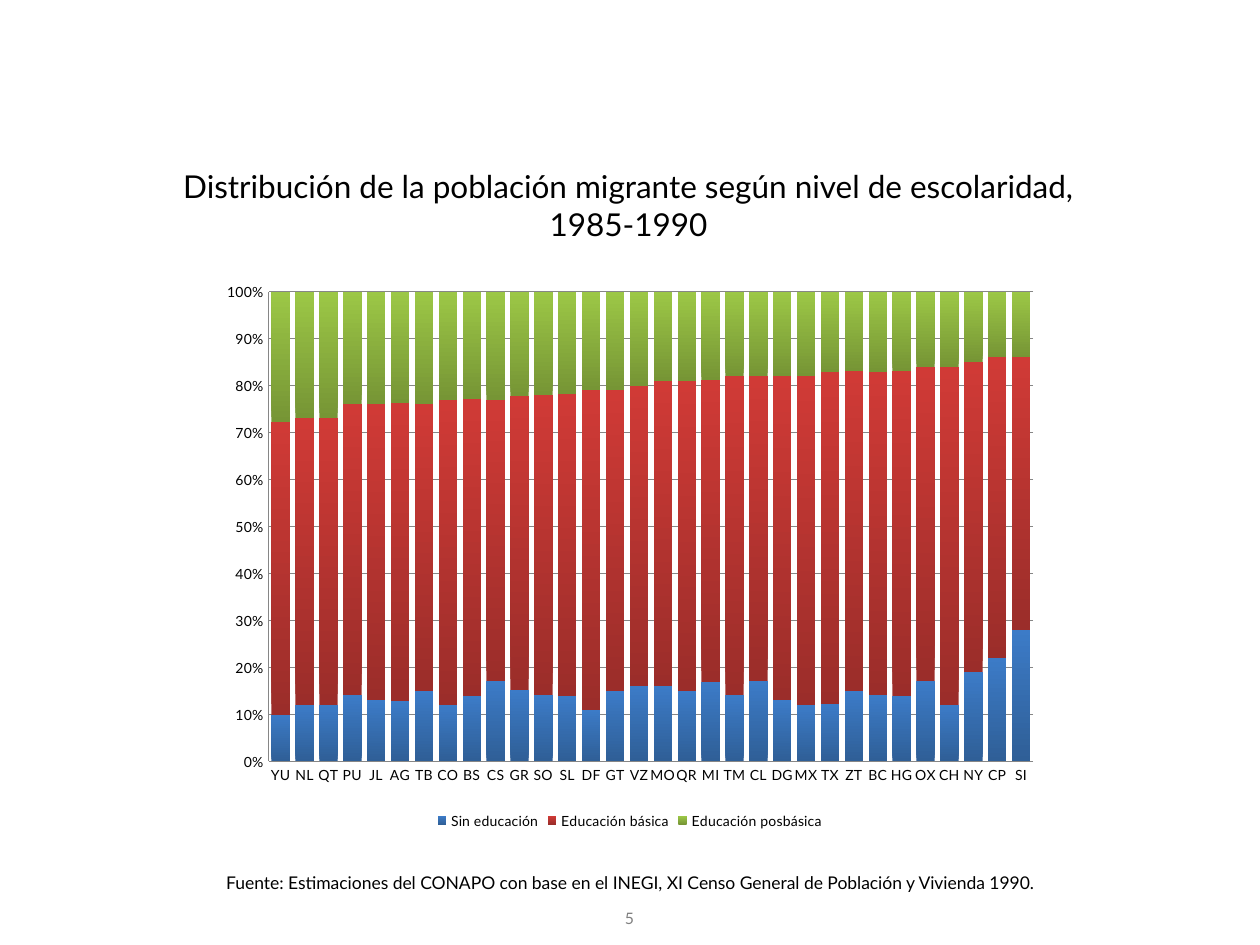
from lxml import etree
from pptx import Presentation
from pptx import util as u
from pptx.chart.data import CategoryChartData
from pptx.dml.color import RGBColor
from pptx.enum import chart as kinds
from pptx.enum import text
from pptx.oxml.ns import qn

FONT = "Lato"
COLORS = {"ink": "000000", "muted": "808080", "grid": "868686"}


def px(value):
    return u.Emu(round(value * 914400 / 126))


def write(box, words, size, color, anchor):
    frame = box.text_frame
    frame.text = words
    frame.word_wrap = True
    frame.auto_size = text.MSO_AUTO_SIZE.NONE
    frame.vertical_anchor = anchor
    para = frame.paragraphs[0]
    para.alignment = text.PP_ALIGN.CENTER
    span = para.runs[0]
    span.font.name = FONT
    span.font.size = u.Pt(size)
    span.font.color.rgb = RGBColor.from_string(COLORS[color])


deck = Presentation()
deck.slide_width, deck.slide_height = px(1260), px(945)
page = deck.slides.add_slide(deck.slide_layouts[5])

# Title
title = page.shapes.title
title.left, title.top, title.width, title.height = px(154), px(126), px(949), px(158)
write(title, "Distribución de la población migrante según nivel de escolaridad, 1985-1990",
      18, "ink", text.MSO_ANCHOR.MIDDLE)

# Schooling by state: name, values, dark and light ends of the gradient
states = ("YU NL QT PU JL AG TB CO BS CS GR SO SL DF GT VZ "
          "MO QR MI TM CL DG MX TX ZT BC HG OX CH NY CP SI").split()
levels = [
    ("Sin educación",
     [10, 12, 12, 14, 13, 13, 15, 12, 14, 17, 15, 14, 14, 11, 15, 16,
      16, 15, 17, 14, 17, 13, 12, 12, 15, 14, 14, 17, 12, 19, 22, 28],
     "2F5F97", "3C7BC7"),
    ("Educación básica",
     [63, 61, 61, 62, 63, 64, 61, 65, 64, 60, 62, 64, 65, 68, 64, 64,
      65, 66, 65, 68, 65, 69, 70, 70, 69, 69, 70, 67, 72, 66, 64, 58],
     "9B2D2A", "D03A36"),
    ("Educación posbásica",
     [28, 27, 27, 24, 24, 24, 24, 23, 23, 23, 22, 22, 22, 21, 21, 20,
      19, 19, 19, 18, 18, 18, 18, 17, 17, 17, 17, 16, 16, 15, 14, 14],
     "769535", "9CC746"),
]
data = CategoryChartData()
data.categories = states
for name, values, dark, light in levels:
    data.add_series(name, values)
chart = page.shapes.add_chart(kinds.XL_CHART_TYPE.COLUMN_STACKED_100,
                              px(210), px(275), px(840), px(559), data).chart
chart.has_title = False
chart.font.name = FONT
chart.font.size = u.Pt(10)
chart.font.color.rgb = RGBColor.from_string(COLORS["ink"])

# Columns
plot = chart.plots[0]
plot.gap_width, plot.overlap = 30, 100
plot.vary_by_categories = False
for series, (name, values, dark, light) in zip(plot.series, levels):
    fill = series.format.fill
    fill.gradient()
    fill.gradient_angle = 90
    for stop, color in zip(fill.gradient_stops, (dark, light)):
        stop.color.rgb = RGBColor.from_string(color)

# Axes
scale = chart.value_axis
scale.minimum_scale, scale.maximum_scale, scale.major_unit = 0, 1, 0.1
scale.has_major_gridlines = True
scale.tick_labels.number_format = "0%"
scale.tick_labels.number_format_is_linked = False
for axis in (scale, chart.category_axis):
    axis.major_tick_mark = kinds.XL_TICK_MARK.NONE
    axis.minor_tick_mark = kinds.XL_TICK_MARK.NONE
    axis.tick_labels.font.size = u.Pt(8)
for part in (scale, chart.category_axis, scale.major_gridlines):
    part.format.line.color.rgb = RGBColor.from_string(COLORS["grid"])
    part.format.line.width = u.Pt(0.75)

# Legend
chart.has_legend = True
chart.legend.position = kinds.XL_LEGEND_POSITION.BOTTOM
chart.legend.include_in_layout = False
chart.legend.font.size = u.Pt(8)

# Inner plot area, as fractions of the chart
area = chart.element.find(".//" + qn("c:plotArea"))
for old in area.findall(qn("c:layout")):
    area.remove(old)
layout = etree.Element(qn("c:layout"))
area.insert(0, layout)
manual = etree.SubElement(layout, qn("c:manualLayout"))
for tag, value in (("layoutTarget", "inner"), ("xMode", "edge"), ("yMode", "edge"),
                   ("x", 0.07), ("y", 0.03), ("w", 0.91), ("h", 0.84)):
    etree.SubElement(manual, qn("c:" + tag)).set("val", str(value))

# Source and page number
source = page.shapes.add_textbox(px(164), px(866), px(932), px(34))
write(source, "Fuente: Estimaciones del CONAPO con base en el INEGI, "
      "XI Censo General de Población y Vivienda 1990.", 10, "ink", text.MSO_ANCHOR.TOP)
number = page.shapes.add_textbox(px(561), px(903), px(137), px(42))
write(number, "5", 9, "muted", text.MSO_ANCHOR.TOP)

deck.save("out.pptx")
